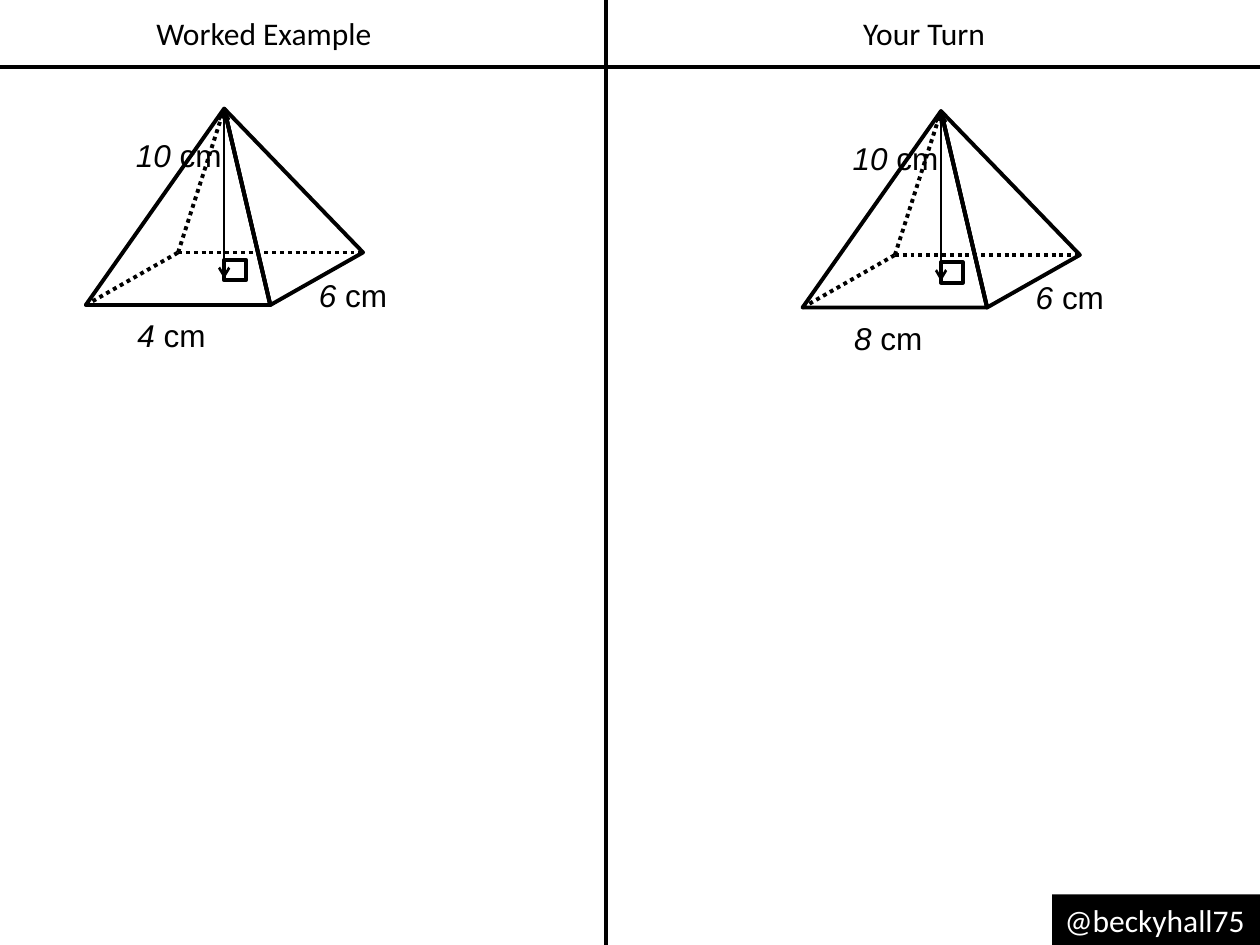
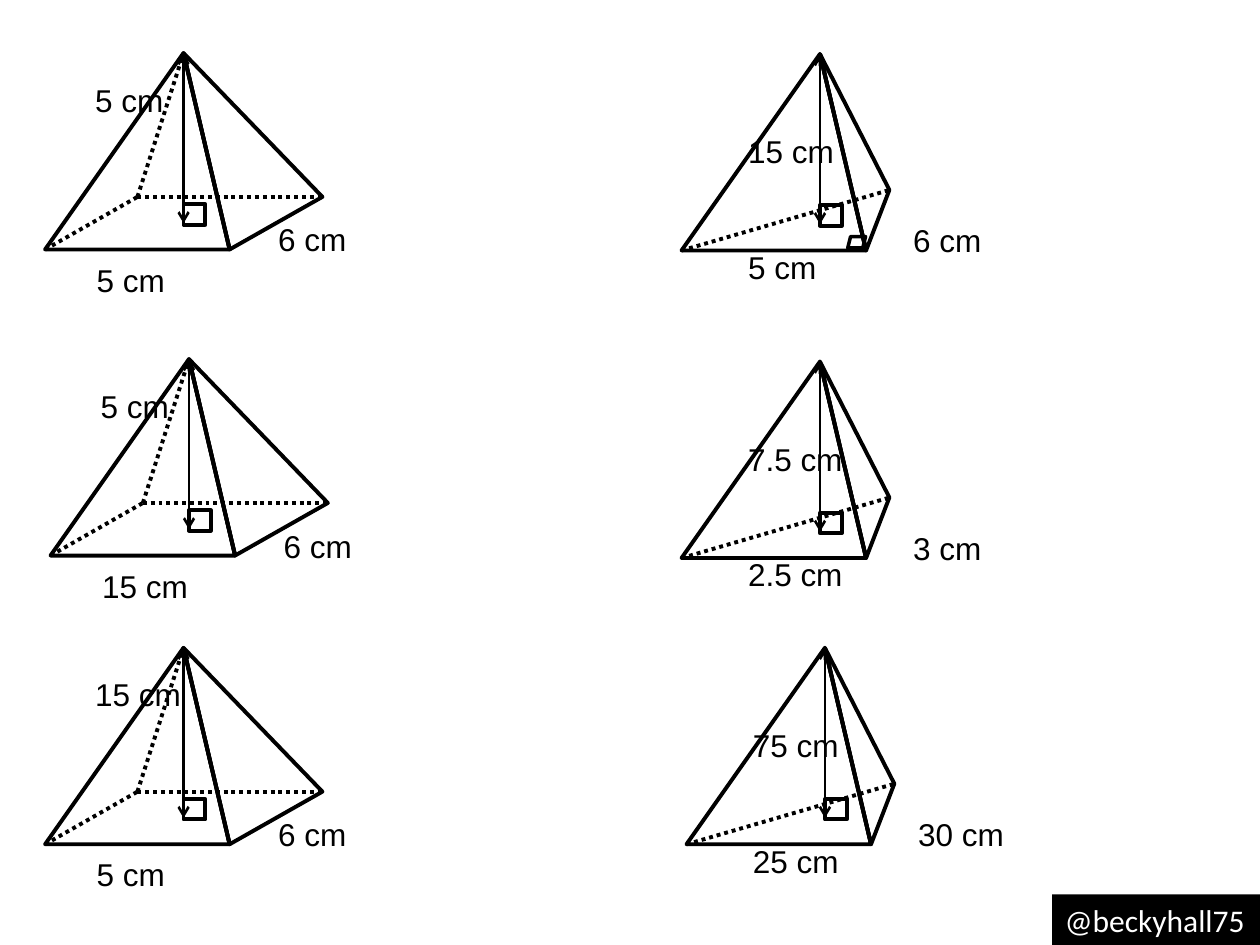
from dataclasses import dataclass

from pptx import Presentation
from pptx.dml.color import RGBColor
from pptx.enum.dml import MSO_LINE
from pptx.enum.shapes import MSO_CONNECTOR, MSO_SHAPE
from pptx.enum.text import MSO_ANCHOR, MSO_AUTO_SIZE, PP_ALIGN
from pptx.oxml.ns import qn
from pptx.util import Cm, Pt
from lxml.etree import SubElement

Point = tuple[float, float]

# Shared style, lengths in centimetres
BLACK, WHITE = "000000", "FFFFFF"
SLIDE_WIDTH, SLIDE_HEIGHT = 25.4, 19.05
TEXT_SIZE = 18
TEXT_HEIGHT = 1.02
EDGE_WIDTH = 2.25
HANDLE = "@beckyhall75"

# Corners of the solids, measured from the front left corner
FRONT_LEFT: Point = (0, 0)
FRONT_RIGHT: Point = (3.72, 0)
BACK_LEFT: Point = (1.86, -1.06)
BACK_RIGHT: Point = (5.59, -1.06)
SIDE_CORNER: Point = (4.19, -1.22)
APEX: Point = (2.79, -3.96)
HEIGHT_FOOT: Point = (2.79, -0.53)
HEIGHT_MARK: Point = (2.79, -0.91)
BASE_MARK: Point = (3.35, -0.28)


@dataclass(frozen=True)
class SolidKind:
    """Faces, hidden edges and label places of one kind of solid."""
    faces: tuple[tuple[Point, ...], ...]
    hidden_edges: tuple[tuple[Point, Point], ...]
    base_label: Point
    height_label: Point
    depth_label: Point


@dataclass(frozen=True)
class Solid:
    kind: SolidKind
    left: float
    bottom: float
    base: str
    height: str
    depth: str
    italic_numbers: bool = False
    base_right_angle: bool = False


FRONT_FACE = (FRONT_RIGHT, APEX, FRONT_LEFT)
PYRAMID = SolidKind(
    faces=(FRONT_FACE, (FRONT_RIGHT, BACK_RIGHT, APEX)),
    hidden_edges=((BACK_LEFT, APEX), (FRONT_LEFT, BACK_LEFT), (BACK_LEFT, BACK_RIGHT)),
    base_label=(0.79, 0.1), height_label=(0.76, -3.53), depth_label=(4.45, -0.71),
)
TETRAHEDRON = SolidKind(
    faces=(FRONT_FACE, (FRONT_RIGHT, SIDE_CORNER, APEX)),
    hidden_edges=((FRONT_LEFT, SIDE_CORNER),),
    base_label=(1.09, -0.18), height_label=(1.09, -2.51), depth_label=(4.42, -0.71),
)

EXAMPLES = (
    Solid(PYRAMID, 1.73, 6.15, "4", "10", "6", italic_numbers=True),
    Solid(PYRAMID, 16.18, 6.2, "8", "10", "6", italic_numbers=True),
)
EXERCISES = (
    Solid(PYRAMID, 0.91, 5.03, "5", "5", "6"),
    Solid(PYRAMID, 1.02, 11.2, "15", "5", "6"),
    Solid(PYRAMID, 0.91, 17.02, "5", "15", "6"),
    Solid(TETRAHEDRON, 13.74, 5.05, "5", "15", "6", base_right_angle=True),
    Solid(TETRAHEDRON, 13.74, 11.25, "2.5", "7.5", "3"),
    Solid(TETRAHEDRON, 13.84, 17.02, "25", "75", "30"),
)


def color(value: str) -> RGBColor:
    return RGBColor.from_string(value)


def outline(shape, width: float = EDGE_WIDTH) -> None:
    shape.shadow.inherit = False
    shape.fill.background()
    shape.line.color.rgb = color(BLACK)
    shape.line.width = Pt(width)


def add_line(shapes, start: Point, end: Point, width: float = EDGE_WIDTH,
             dotted: bool = False, arrows: bool = False) -> None:
    connector = shapes.add_connector(
        MSO_CONNECTOR.STRAIGHT, Cm(start[0]), Cm(start[1]), Cm(end[0]), Cm(end[1]))
    line = connector.line
    line.color.rgb = color(BLACK)
    line.width = Pt(width)
    if dotted:
        line.dash_style = MSO_LINE.ROUND_DOT
    if arrows:
        for tag in ("a:headEnd", "a:tailEnd"):
            SubElement(line._get_or_add_ln(), qn(tag), type="arrow")
    SubElement(connector._element.spPr, qn("a:effectLst"))


def add_run(paragraph, text: str, font: str, text_color: str = BLACK,
            italic: bool = False) -> None:
    run = paragraph.add_run()
    run.text = text
    run.font.name = font
    run.font.size = Pt(TEXT_SIZE)
    run.font.color.rgb = color(text_color)
    run.font.italic = italic


def add_text_box(shapes, left: float, top: float, width: float, wrap: bool):
    box = shapes.add_textbox(Cm(left), Cm(top), Cm(width), Cm(TEXT_HEIGHT))
    box.text_frame.word_wrap = wrap
    box.text_frame.auto_size = MSO_AUTO_SIZE.SHAPE_TO_FIT_TEXT
    return box.text_frame.paragraphs[0]


def add_length(shapes, position: Point, number: str, italic: bool) -> None:
    dots = number.count(".")
    digits = len(number) - dots
    width = 1.56 + 0.35 * digits + 0.18 * dots
    paragraph = add_text_box(shapes, *position, width, wrap=False)
    if italic:
        add_run(paragraph, f"{number} ", "Arial", italic=True)
        add_run(paragraph, "cm", "Arial")
    else:
        add_run(paragraph, f"{number} cm", "Arial")


def add_face(shapes, corners: list[Point]) -> None:
    points = [(Cm(x), Cm(y)) for x, y in corners]
    builder = shapes.build_freeform(*points[0])
    builder.add_line_segments(points[1:], close=True)
    outline(builder.convert_to_shape())


def add_mark(shapes, kind: MSO_SHAPE, position: Point, width: float, height: float,
             line_width: float = EDGE_WIDTH) -> None:
    mark = shapes.add_shape(kind, Cm(position[0]), Cm(position[1]), Cm(width), Cm(height))
    outline(mark, line_width)


def add_solid(slide, solid: Solid) -> None:
    shapes = slide.shapes.add_group_shape().shapes
    kind = solid.kind

    def place(point: Point) -> Point:
        return solid.left + point[0], solid.bottom + point[1]

    # Faces and edges
    for face in kind.faces:
        add_face(shapes, [place(corner) for corner in face])
    for start, end in kind.hidden_edges:
        add_line(shapes, place(start), place(end), dotted=True)
    add_line(shapes, place(FRONT_RIGHT), place(APEX))

    # Lengths
    for position, number in ((kind.base_label, solid.base),
                             (kind.height_label, solid.height),
                             (kind.depth_label, solid.depth)):
        add_length(shapes, place(position), number, solid.italic_numbers)

    # Height and right angles
    add_mark(shapes, MSO_SHAPE.RECTANGLE, place(HEIGHT_MARK), 0.44, 0.41)
    add_line(shapes, place(APEX), place(HEIGHT_FOOT), width=1.5, arrows=True)
    if solid.base_right_angle:
        add_mark(shapes, MSO_SHAPE.PARALLELOGRAM, place(BASE_MARK), 0.36, 0.23, 2)


def add_columns(slide) -> None:
    for title, left in (("Worked Example", 2.87), ("Your Turn", 16.18)):
        paragraph = add_text_box(slide.shapes, left, 0.15, 4.9, wrap=True)
        paragraph.alignment = PP_ALIGN.CENTER
        add_run(paragraph, title, "Calibri")
    add_line(slide.shapes, (12.22, 0), (12.22, SLIDE_HEIGHT), width=2.5)
    add_line(slide.shapes, (0, 1.35), (SLIDE_WIDTH, 1.35), width=2.5)


def add_handle(slide) -> None:
    width = 4.19
    band = slide.shapes.add_shape(
        MSO_SHAPE.RECTANGLE, Cm(SLIDE_WIDTH - width), Cm(SLIDE_HEIGHT - TEXT_HEIGHT),
        Cm(width), Cm(TEXT_HEIGHT))
    band.shadow.inherit = False
    band.fill.solid()
    band.fill.fore_color.rgb = color(BLACK)
    band.line.fill.background()
    band.text_frame.vertical_anchor = MSO_ANCHOR.TOP
    band.text_frame.auto_size = MSO_AUTO_SIZE.SHAPE_TO_FIT_TEXT
    paragraph = band.text_frame.paragraphs[0]
    paragraph.alignment = PP_ALIGN.LEFT
    add_run(paragraph, HANDLE, "Calibri", WHITE)


def main() -> None:
    presentation = Presentation()
    presentation.slide_width = Cm(SLIDE_WIDTH)
    presentation.slide_height = Cm(SLIDE_HEIGHT)
    blank = presentation.slide_layouts[6]

    for solids in (EXAMPLES, EXERCISES):
        slide = presentation.slides.add_slide(blank)
        if solids is EXAMPLES:
            add_columns(slide)
        for solid in solids:
            add_solid(slide, solid)
        add_handle(slide)

    presentation.save("out.pptx")


if __name__ == "__main__":
    main()
